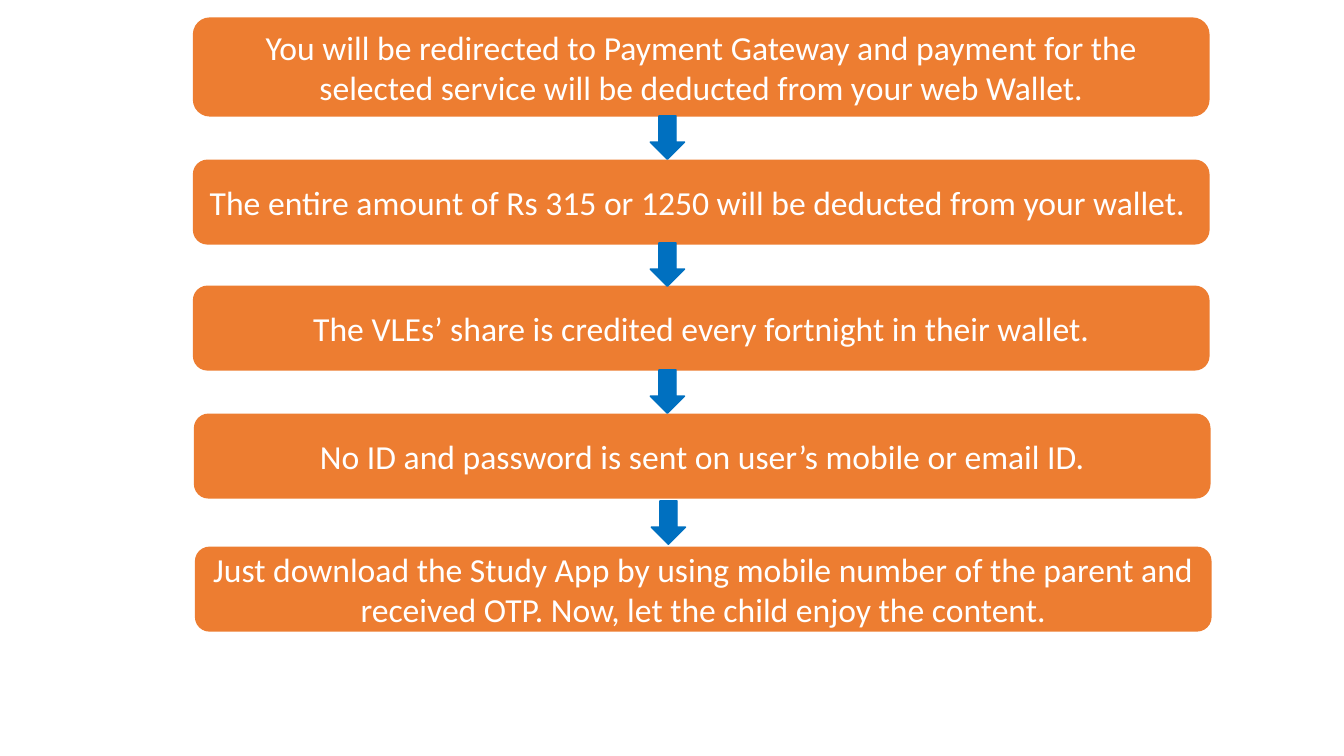
from dataclasses import dataclass

from pptx import Presentation
from pptx import util as u
from pptx.dml.color import RGBColor
from pptx.enum import shapes, text

PX = 9144  # EMU in one px, 100 px to the inch
COLOURS = {"step": "ED7D31", "arrow": "0070C0", "words": "FFFFFF"}
STEP_WIDTH = 1007
ARROW_WIDTH, ARROW_HEIGHT = 34, 43
ARROW_INDENT = 453  # from the left edge of the step above
FONT = {"name": "Calibri", "size": u.Pt(24)}
FRAME = {"word_wrap": True, "vertical_anchor": text.MSO_ANCHOR.MIDDLE}


@dataclass
class Step:
    words: str
    left: int
    top: int
    height: int = 83
    arrow_top: int | None = None


STEPS = [
    Step("You will be redirected to Payment Gateway and payment for the "
         "selected service will be deducted from your web Wallet.",
         192, 18, height=97, arrow_top=115),
    Step("The entire amount of Rs 315 or 1250 will be deducted from your wallet. ",
         192, 159, arrow_top=241),
    Step("The VLEs’ share is credited every fortnight in their wallet.",
         192, 284, arrow_top=367),
    Step("No ID and password is sent on user’s mobile or email ID.",
         193, 411, arrow_top=497),
    Step("Just download the Study App by using mobile number of the parent "
         "and received OTP. Now, let the child enjoy the content.",
         194, 543),
]


def set_all(target, values: dict) -> None:
    for name, value in values.items():
        setattr(target, name, value)


def add_block(slide, kind, colour: str, left: int, top: int, width: int, height: int):
    block = slide.shapes.add_shape(kind, *(n * PX for n in (left, top, width, height)))
    block.shadow.inherit = False
    rgb = RGBColor.from_string(COLOURS[colour])
    for paint in (block.fill, block.line.fill):
        paint.solid()
        paint.fore_color.rgb = rgb
    block.line.width = u.Pt(1)
    return block


def add_step(slide, step: Step) -> None:
    box = add_block(slide, shapes.MSO_SHAPE.ROUNDED_RECTANGLE, "step",
                    step.left, step.top, STEP_WIDTH, step.height)
    set_all(box.text_frame, FRAME)
    line = box.text_frame.paragraphs[0]
    line.alignment = text.PP_ALIGN.CENTER
    run = line.add_run()
    run.text = step.words
    set_all(run.font, FONT)
    run.font.color.rgb = RGBColor.from_string(COLOURS["words"])


def add_arrow(slide, step: Step) -> None:
    add_block(slide, shapes.MSO_SHAPE.DOWN_ARROW, "arrow",
              step.left + ARROW_INDENT, step.arrow_top, ARROW_WIDTH, ARROW_HEIGHT)


def main() -> None:
    deck = Presentation()
    set_all(deck, {"slide_width": 1333 * PX, "slide_height": 750 * PX})
    slide = deck.slides.add_slide(deck.slide_layouts[6])

    # Steps of the payment flow
    for step in STEPS:
        add_step(slide, step)

    # Arrows over the steps
    for step in STEPS:
        if step.arrow_top is not None:
            add_arrow(slide, step)

    deck.save("out.pptx")


if __name__ == "__main__":
    main()
